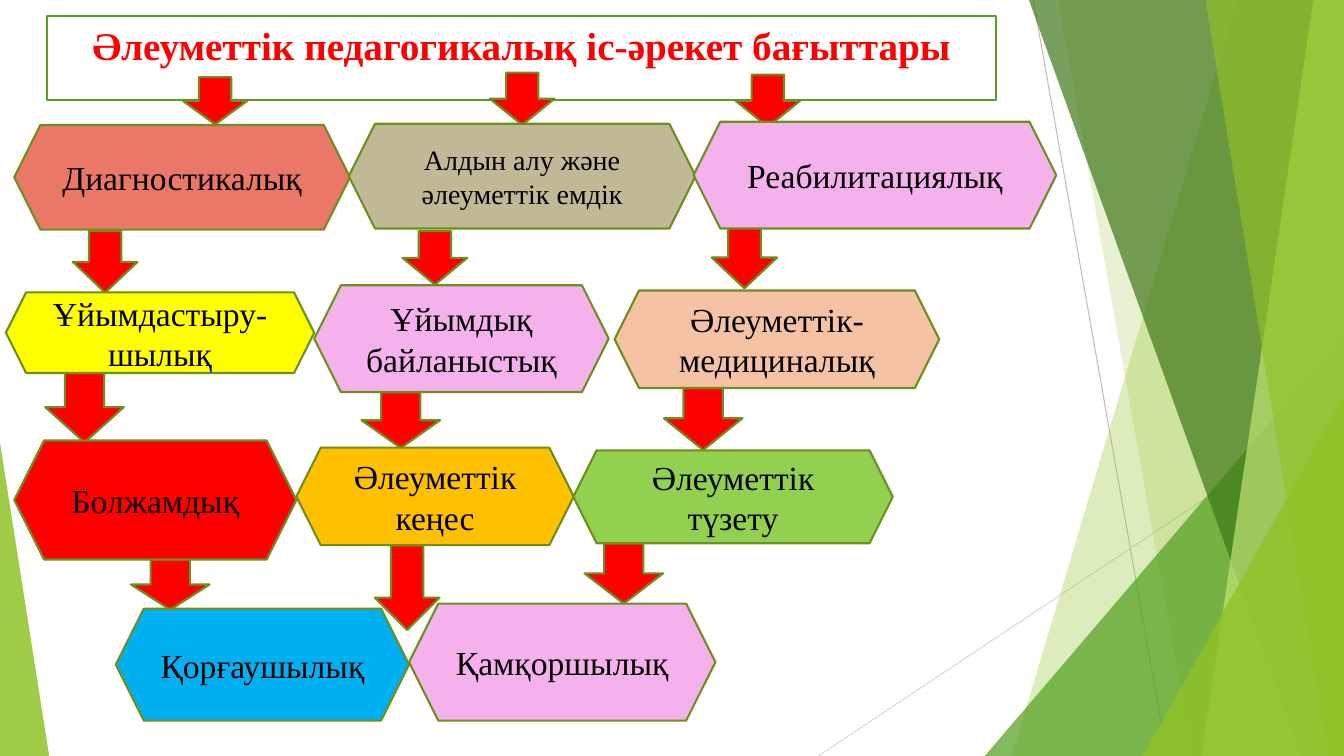
from lxml import etree
from pptx import Presentation
from pptx import util as u
from pptx.dml.color import RGBColor
from pptx.enum import shapes, text
from pptx.oxml.ns import qn

Cm = u.Cm
WIDTH, HEIGHT = 33.87, 19.05


def paint(shape, fill, line=None, opacity=100):
    shape.shadow.inherit = False
    shape.fill.solid()
    shape.fill.fore_color.rgb = RGBColor.from_string(fill)
    if opacity < 100:
        color = shape.fill._xPr.find(qn("a:solidFill"))[0]
        etree.SubElement(color, qn("a:alpha"), val=str(opacity * 1000))
    if line:
        shape.line.color.rgb = RGBColor.from_string(line)
        shape.line.width = u.Pt(1.5)
    else:
        shape.line.fill.background()


def write(shape, wording, size=24, color="000000", bold=False,
          anchor=text.MSO_ANCHOR.MIDDLE):
    frame = shape.text_frame
    frame.word_wrap = True
    frame.vertical_anchor = anchor
    frame.text = wording
    for paragraph in frame.paragraphs:
        paragraph.alignment = text.PP_ALIGN.CENTER
        paragraph.font.name = "Times New Roman"
        paragraph.font.size = u.Pt(size)
        paragraph.font.bold = bold
        paragraph.font.color.rgb = RGBColor.from_string(color)


deck = Presentation()
deck.slide_width, deck.slide_height = Cm(WIDTH), Cm(HEIGHT)
slide = deck.slides.add_slide(deck.slide_layouts[5])

# Thin lines behind the facets
for x1, y1, x2, y2, grey in [
    (26.04, 0, 29.41, HEIGHT, "BFBFBF"),
    (WIDTH, 10.24, 20.62, HEIGHT, "D9D9D9"),
]:
    ray = slide.shapes.add_connector(
        shapes.MSO_CONNECTOR.STRAIGHT, Cm(x1), Cm(y1), Cm(x2), Cm(y2))
    ray.line.color.rgb = RGBColor.from_string(grey)
    ray.line.width = u.Pt(0.75)
    etree.SubElement(ray._element.spPr, qn("a:effectLst"))

# Green facets: a band has top and bottom x, a wedge has left, top, width, apex
for geometry, green, opacity in [
    ((31.19, 25.5), "90C226", 30),
    ((26.67, 30.05), "90C226", 20),
    ((24.82, 8.46, 9.05, 1), "54A021", 72),
    ((25.93, 32.79), "3F7819", 70),
    ((33.1, 30.28), "C0E474", 70),
    ((30.38, 33.48), "90C226", 65),
    ((28.8, 9.98, 5.07, 1), "90C226", 80),
    ((0, 11.15, 1.24, 0), "90C226", 85),
]:
    if len(geometry) == 2:
        top_x, bottom_x = geometry
        outline = slide.shapes.build_freeform(Cm(top_x), 0)
        outline.add_line_segments(
            [(Cm(WIDTH), 0), (Cm(WIDTH), Cm(HEIGHT)), (Cm(bottom_x), Cm(HEIGHT))])
        facet = outline.convert_to_shape()
    else:
        left, top, width, apex = geometry
        facet = slide.shapes.add_shape(
            shapes.MSO_SHAPE.ISOSCELES_TRIANGLE,
            Cm(left), Cm(top), Cm(width), Cm(HEIGHT - top))
        facet.adjustments[0] = apex
    paint(facet, green, opacity=opacity)

# Title
title = slide.shapes.title
title.left, title.top, title.width, title.height = Cm(1.19), Cm(0.41), Cm(23.9), Cm(1.45)
paint(title, "FFFFFF", "54A021")
write(title, "Әлеуметтік педагогикалық іс-әрекет бағыттары", size=28,
      color="FF0000", bold=True, anchor=text.MSO_ANCHOR.TOP)
title.text_frame.auto_size = text.MSO_AUTO_SIZE.SHAPE_TO_FIT_TEXT

# Arrows pointing down: centre x, centre y, length, breadth
for x, y, length, breadth in [
    (5.42, 2.54, 1.19, 1.63), (13.16, 2.49, 1.32, 1.63), (19.35, 2.54, 1.32, 1.63),
    (2.65, 6.6, 1.55, 1.63), (10.96, 6.5, 1.35, 1.63), (18.76, 6.49, 1.55, 1.65),
    (2.13, 10.26, 1.78, 1.98), (10.1, 10.59, 1.4, 1.98), (17.72, 10.54, 1.6, 1.98),
    (4.29, 14.73, 1.27, 1.98), (10.26, 14.81, 2.13, 1.63), (15.72, 14.45, 1.52, 1.98),
]:
    arrow = slide.shapes.add_shape(
        shapes.MSO_SHAPE.RIGHT_ARROW, Cm(x - length / 2), Cm(y - breadth / 2),
        Cm(length), Cm(breadth))
    arrow.rotation = 90
    paint(arrow, "FF0000", "6B901C")

# Directions of the work, row by row
for wording, left, top, width, height, fill, size in [
    ("Диагностикалық", 0.36, 3.15, 8.46, 2.64, "EB7766", 24),
    ("Алдын алу және әлеуметтік емдік", 8.79, 3.12, 8.74, 2.64, "C1B995", 20),
    ("Реабилитациялық", 17.48, 3.07, 9.14, 2.69, "F5B1EB", 24),
    ("Ұйымдастыру-\nшылық", 0.15, 7.37, 7.77, 2.03, "FFFF00", 24),
    ("Ұйымдық байланыстық", 7.92, 7.19, 7.42, 2.69, "F5B1EB", 24),
    ("Әлеуметтік-медициналық", 15.49, 7.32, 8.18, 2.46, "F5C2A3", 24),
    ("Болжамдық", 0.36, 11.1, 7.11, 3, "FF0000", 24),
    ("Әлеуметтік кеңес", 7.47, 11.28, 6.99, 2.46, "FFC000", 24),
    ("Әлеуметтік түзету", 14.45, 11.35, 8.05, 2.34, "92D050", 24),
    ("Қорғаушылық", 2.92, 15.34, 7.39, 2.82, "00B0F0", 24),
    ("Қамқоршылық", 10.31, 15.21, 7.72, 2.95, "F5B1EB", 24),
]:
    direction = slide.shapes.add_shape(
        shapes.MSO_SHAPE.HEXAGON, Cm(left), Cm(top), Cm(width), Cm(height))
    paint(direction, fill, "6B901C")
    write(direction, wording, size=size)

deck.save("out.pptx")
